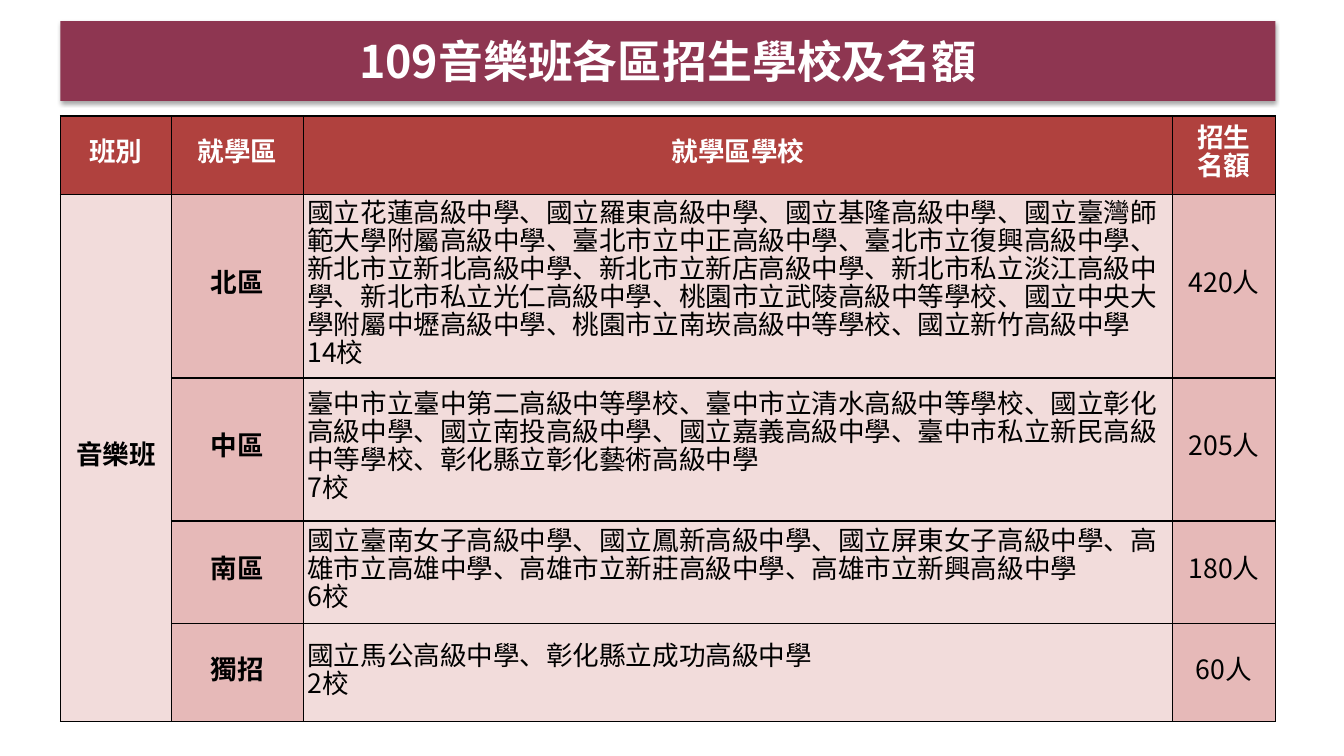
from dataclasses import dataclass

from lxml import etree
from pptx import Presentation
from pptx.dml.color import RGBColor
from pptx.enum.shapes import MSO_SHAPE
from pptx.enum.text import MSO_ANCHOR, PP_ALIGN
from pptx.oxml import parse_xml
from pptx.oxml.ns import nsdecls, qn
from pptx.slide import Slide
from pptx.table import Table, _Cell
from pptx.text.text import TextFrame
from pptx.util import Inches, Pt

RECTANGLE = MSO_SHAPE.RECTANGLE
MIDDLE = MSO_ANCHOR.MIDDLE
LEFT, CENTER = PP_ALIGN.LEFT, PP_ALIGN.CENTER

FONT = "Noto Sans CJK SC"
WHITE = RGBColor(0xFF, 0xFF, 0xFF)
BLACK = RGBColor(0x00, 0x00, 0x00)
PLUM = RGBColor(0x8E, 0x36, 0x51)
RED = RGBColor(0xB0, 0x41, 0x3E)
ROSE = RGBColor(0xE6, 0xB9, 0xB8)
PALE_ROSE = RGBColor(0xF2, 0xDC, 0xDB)

MARGIN_LEFT, CONTENT_WIDTH = 0.6, 12.05
TABLE_TOP = 1.15
COLUMN_WIDTHS = (1.1, 1.31, 8.62, 1.02)
ROW_HEIGHTS = (0.78, 1.82, 1.42, 1.02, 0.97)


@dataclass(frozen=True)
class District:
    name: str
    schools: tuple[str, ...]
    places: int


@dataclass(frozen=True)
class CellStyle:
    fill: RGBColor
    color: RGBColor = BLACK
    bold: bool = False
    alignment: PP_ALIGN = CENTER


HEADER = CellStyle(RED, WHITE, bold=True)
CLASS_NAME = CellStyle(PALE_ROSE, bold=True)
DISTRICT_NAME = CellStyle(ROSE, bold=True)
SCHOOLS = CellStyle(PALE_ROSE, alignment=LEFT)
PLACES = CellStyle(ROSE)

HEADINGS = ("班別", "就學區", "就學區學校", "招生\n名額")
DISTRICTS = (
    District("北區", (
        "國立花蓮高級中學", "國立羅東高級中學", "國立基隆高級中學",
        "國立臺灣師範大學附屬高級中學", "臺北市立中正高級中學",
        "臺北市立復興高級中學", "新北市立新北高級中學",
        "新北市立新店高級中學", "新北市私立淡江高級中學",
        "新北市私立光仁高級中學", "桃園市立武陵高級中等學校",
        "國立中央大學附屬中壢高級中學", "桃園市立南崁高級中等學校",
        "國立新竹高級中學"), 420),
    District("中區", (
        "臺中市立臺中第二高級中等學校", "臺中市立清水高級中等學校",
        "國立彰化高級中學", "國立南投高級中學", "國立嘉義高級中學",
        "臺中市私立新民高級中等學校", "彰化縣立彰化藝術高級中學"), 205),
    District("南區", (
        "國立臺南女子高級中學", "國立鳳新高級中學", "國立屏東女子高級中學",
        "高雄市立高雄中學", "高雄市立新莊高級中學", "高雄市立新興高級中學"), 180),
    District("獨招", ("國立馬公高級中學", "彰化縣立成功高級中學"), 60),
)


def format_text(text_frame: TextFrame, size: float, color: RGBColor,
                bold: bool, alignment: PP_ALIGN) -> None:
    for paragraph in text_frame.paragraphs:
        paragraph.alignment = alignment
        for run in paragraph.runs:
            run.font.size = Pt(size)
            run.font.bold = bold
            run.font.color.rgb = color
            run.font.name = FONT
            east_asian = etree.SubElement(run.font._element, qn("a:ea"))
            east_asian.set("typeface", FONT)


def add_borders(cell: _Cell) -> None:
    properties = cell._tc.get_or_add_tcPr()
    for index, side in enumerate(("lnL", "lnR", "lnT", "lnB")):
        properties.insert(index, parse_xml(
            f'<a:{side} {nsdecls("a")} w="{Pt(1)}"><a:solidFill>'
            f'<a:srgbClr val="{BLACK}"/></a:solidFill></a:{side}>'))


def fill_cell(cell: _Cell, text: str, style: CellStyle) -> None:
    cell.text_frame.text = text
    cell.vertical_anchor = MIDDLE
    cell.margin_left = cell.margin_right = Inches(0.04)
    cell.margin_top = cell.margin_bottom = 0
    cell.fill.solid()
    cell.fill.fore_color.rgb = style.fill
    format_text(cell.text_frame, 19, style.color, style.bold, style.alignment)
    for paragraph in cell.text_frame.paragraphs:
        paragraph.line_spacing = Pt(20)


def add_title(slide: Slide) -> None:
    banner = slide.shapes.add_shape(
        RECTANGLE, Inches(MARGIN_LEFT), Inches(0.21),
        Inches(CONTENT_WIDTH), Inches(0.79))
    banner.fill.solid()
    banner.fill.fore_color.rgb = PLUM
    banner.line.fill.background()
    banner.shadow.inherit = False
    effects = banner._element.spPr.find(qn("a:effectLst"))
    effects.append(parse_xml(
        f'<a:outerShdw {nsdecls("a")} blurRad="{Pt(3.1)}" dist="{Pt(1.8)}" '
        f'dir="5400000" rotWithShape="0"><a:srgbClr val="{BLACK}">'
        '<a:alpha val="35000"/></a:srgbClr></a:outerShdw>'))
    banner.text_frame.text = "109音樂班各區招生學校及名額"
    banner.text_frame.word_wrap = True
    banner.text_frame.vertical_anchor = MIDDLE
    format_text(banner.text_frame, 32, WHITE, True, CENTER)


def add_empty_table(slide: Slide) -> Table:
    table = slide.shapes.add_table(
        len(ROW_HEIGHTS), len(COLUMN_WIDTHS), Inches(MARGIN_LEFT),
        Inches(TABLE_TOP), Inches(CONTENT_WIDTH),
        Inches(sum(ROW_HEIGHTS))).table
    table.first_row = table.horz_banding = False
    for column, width in zip(table.columns, COLUMN_WIDTHS):
        column.width = Inches(width)
    for row, height in zip(table.rows, ROW_HEIGHTS):
        row.height = Inches(height)
    return table


def add_district_table(slide: Slide) -> None:
    table = add_empty_table(slide)
    for column, heading in enumerate(HEADINGS):
        fill_cell(table.cell(0, column), heading, HEADER)

    class_cell = table.cell(1, 0)
    class_cell.merge(table.cell(len(DISTRICTS), 0))
    fill_cell(class_cell, "音樂班", CLASS_NAME)

    for row, district in enumerate(DISTRICTS, start=1):
        schools = f"{'、'.join(district.schools)}\n{len(district.schools)}校"
        fill_cell(table.cell(row, 1), district.name, DISTRICT_NAME)
        fill_cell(table.cell(row, 2), schools, SCHOOLS)
        fill_cell(table.cell(row, 3), f"{district.places}人", PLACES)

    for cell in table.iter_cells():
        add_borders(cell)


def main() -> None:
    presentation = Presentation()
    presentation.slide_width = Inches(13.33)
    presentation.slide_height = Inches(7.5)
    slide = presentation.slides.add_slide(presentation.slide_layouts[6])
    add_title(slide)
    add_district_table(slide)
    presentation.save("out.pptx")


if __name__ == "__main__":
    main()
